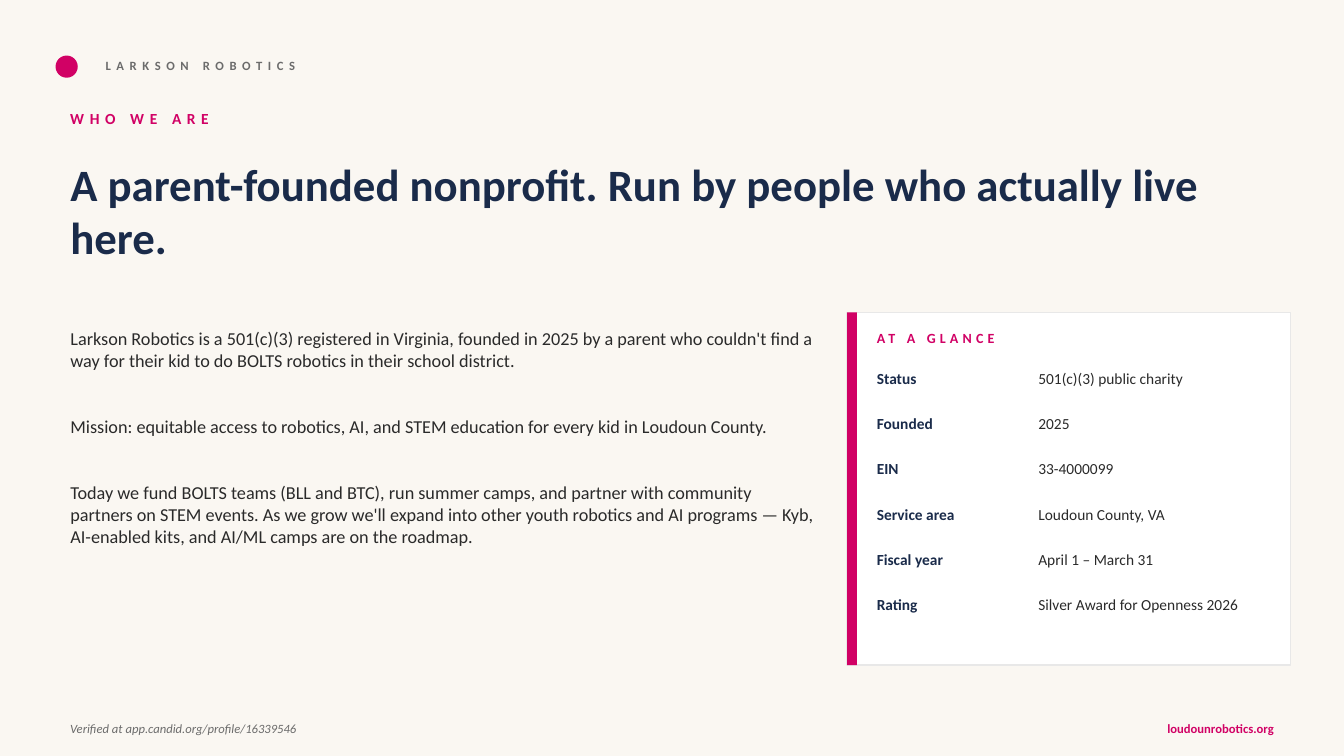
from dataclasses import dataclass

from lxml.etree import SubElement
from pptx import Presentation
from pptx.dml.color import RGBColor
from pptx.enum.shapes import MSO_SHAPE
from pptx.enum.text import MSO_ANCHOR, MSO_AUTO_SIZE, PP_ALIGN
from pptx.oxml.ns import qn
from pptx.shapes.autoshape import Shape
from pptx.slide import Slide
from pptx.text.text import _Paragraph as Paragraph
from pptx.util import Cm, Pt

CREAM = RGBColor(0xFA, 0xF7, 0xF2)
MAGENTA = RGBColor(0xD1, 0x01, 0x65)
NAVY = RGBColor(0x1A, 0x2B, 0x4A)
INK = RGBColor(0x2A, 0x2A, 0x2A)
GREY = RGBColor(0x6B, 0x6B, 0x6B)
WHITE = RGBColor(0xFF, 0xFF, 0xFF)
BORDER = RGBColor(0xE8, 0xE8, 0xE8)
FONT = "Calibri"


@dataclass(frozen=True)
class Box:
    left: float
    top: float
    width: float
    height: float


@dataclass(frozen=True)
class Style:
    size: float
    color: RGBColor
    bold: bool = False
    italic: bool = False
    tracking: int = 0


@dataclass(frozen=True)
class Label:
    text: str
    box: Box
    style: Style
    alignment: PP_ALIGN = PP_ALIGN.LEFT


MARGIN = 1.52
CONTENT_WIDTH = 30.81
CARD = Box(21.34, 7.87, 11.18, 8.89)
CARD_TEXT_LEFT = 21.84
FACT_VALUE_LEFT = 25.91
FACT_TOP = 9.02
FACT_PITCH = 1.14
FACT_HEIGHT = 1.02
FOOTER_TOP = 17.98

TITLE_STYLE = Style(32, NAVY, bold=True)
BODY_STYLE = Style(13, INK)
FACT_NAME_STYLE = Style(11, NAVY, bold=True)
FACT_VALUE_STYLE = Style(11, INK)

TITLE = "A parent-founded nonprofit. Run by people who actually live here."
STORY = [
    "Larkson Robotics is a 501(c)(3) registered in Virginia, founded in 2025 by a parent "
    "who couldn't find a way for their kid to do BOLTS robotics in their school district.",
    "Mission: equitable access to robotics, AI, and STEM education for every kid in "
    "Loudoun County.",
    "Today we fund BOLTS teams (BLL and BTC), run summer camps, and partner with community "
    "partners on STEM events. As we grow we'll expand into other youth robotics and AI "
    "programs — Kyb, AI-enabled kits, and AI/ML camps are on the roadmap.",
]
FACTS = {
    "Status": "501(c)(3) public charity",
    "Founded": "2025",
    "EIN": "33-4000099",
    "Service area": "Loudoun County, VA",
    "Fiscal year": "April 1 – March 31",
    "Rating": "Silver Award for Openness 2026",
}
LABELS = [
    Label("LARKSON ROBOTICS", Box(2.41, 1.27, 12.7, 0.76),
          Style(9, GREY, bold=True, tracking=4)),
    Label("WHO WE ARE", Box(MARGIN, 2.54, 20.32, 0.89),
          Style(11, MAGENTA, bold=True, tracking=4)),
    Label("AT A GLANCE", Box(CARD_TEXT_LEFT, 8.13, 10.16, 0.76),
          Style(10, MAGENTA, bold=True, tracking=3)),
    Label("Verified at app.candid.org/profile/16339546",
          Box(MARGIN, FOOTER_TOP, CONTENT_WIDTH, 0.76), Style(9, GREY, italic=True)),
    Label("loudounrobotics.org", Box(26.24, FOOTER_TOP, 6.1, 0.76),
          Style(9, MAGENTA, bold=True), PP_ALIGN.RIGHT),
]


def lengths(box: Box) -> tuple[Cm, Cm, Cm, Cm]:
    return Cm(box.left), Cm(box.top), Cm(box.width), Cm(box.height)


def add_run(paragraph: Paragraph, text: str, style: Style) -> None:
    run = paragraph.add_run()
    run.text = text
    run.font.name = FONT
    run.font.size = Pt(style.size)
    run.font.bold = style.bold
    run.font.italic = style.italic
    run.font.color.rgb = style.color
    if style.tracking:
        run._r.get_or_add_rPr().set("spc", str(style.tracking * 100))


def add_label(slide: Slide, label: Label) -> None:
    frame = slide.shapes.add_textbox(*lengths(label.box)).text_frame
    frame.word_wrap = True
    frame.vertical_anchor = MSO_ANCHOR.MIDDLE
    paragraph = frame.paragraphs[0]
    paragraph.alignment = label.alignment
    add_run(paragraph, label.text, label.style)


def add_block(slide: Slide, kind: MSO_SHAPE, box: Box, color: RGBColor) -> Shape:
    shape = slide.shapes.add_shape(kind, *lengths(box))
    shape.shadow.inherit = False
    shape.fill.solid()
    shape.fill.fore_color.rgb = color
    shape.line.fill.background()
    return shape


def fill_placeholder(shape: Shape, box: Box, texts: list[str], style: Style, gap: float) -> None:
    """Move a placeholder and fill it with unbulleted paragraphs set apart by gap points."""
    shape.left, shape.top, shape.width, shape.height = lengths(box)
    frame = shape.text_frame
    frame.word_wrap = True
    frame.auto_size = MSO_AUTO_SIZE.NONE
    frame.vertical_anchor = MSO_ANCHOR.TOP
    for index, text in enumerate(texts):
        paragraph = frame.add_paragraph() if index else frame.paragraphs[0]
        paragraph.alignment = PP_ALIGN.LEFT
        paragraph.space_before = Pt(0)
        paragraph.space_after = Pt(gap)
        properties = paragraph._p.get_or_add_pPr()
        properties.set("marL", "0")
        properties.set("indent", "0")
        SubElement(properties, qn("a:buNone"))
        add_run(paragraph, text, style)


def add_facts(slide: Slide) -> None:
    value_width = CARD.left + CARD.width - FACT_VALUE_LEFT
    for row, (name, value) in enumerate(FACTS.items()):
        top = FACT_TOP + row * FACT_PITCH
        add_label(slide, Label(name, Box(CARD_TEXT_LEFT, top, 3.81, FACT_HEIGHT),
                               FACT_NAME_STYLE))
        add_label(slide, Label(value, Box(FACT_VALUE_LEFT, top, value_width, FACT_HEIGHT),
                               FACT_VALUE_STYLE))


def main() -> None:
    presentation = Presentation()
    presentation.slide_width = Cm(33.86)
    presentation.slide_height = Cm(19.05)
    slide = presentation.slides.add_slide(presentation.slide_layouts[1])
    slide.background.fill.solid()
    slide.background.fill.fore_color.rgb = CREAM

    fill_placeholder(slide.shapes.title, Box(MARGIN, 3.81, CONTENT_WIDTH, 2.92),
                     [TITLE], TITLE_STYLE, gap=0)
    fill_placeholder(slide.placeholders[1], Box(MARGIN, 8.13, 19.3, 3.81),
                     STORY, BODY_STYLE, gap=31.5)

    add_block(slide, MSO_SHAPE.OVAL, Box(1.4, 1.4, 0.56, 0.56), MAGENTA)
    card = add_block(slide, MSO_SHAPE.RECTANGLE, CARD, WHITE)
    card.line.color.rgb = BORDER
    card.line.width = Pt(1)
    add_block(slide, MSO_SHAPE.RECTANGLE, Box(CARD.left, CARD.top, 0.25, CARD.height), MAGENTA)

    for label in LABELS:
        add_label(slide, label)
    add_facts(slide)
    presentation.save("out.pptx")


if __name__ == "__main__":
    main()
